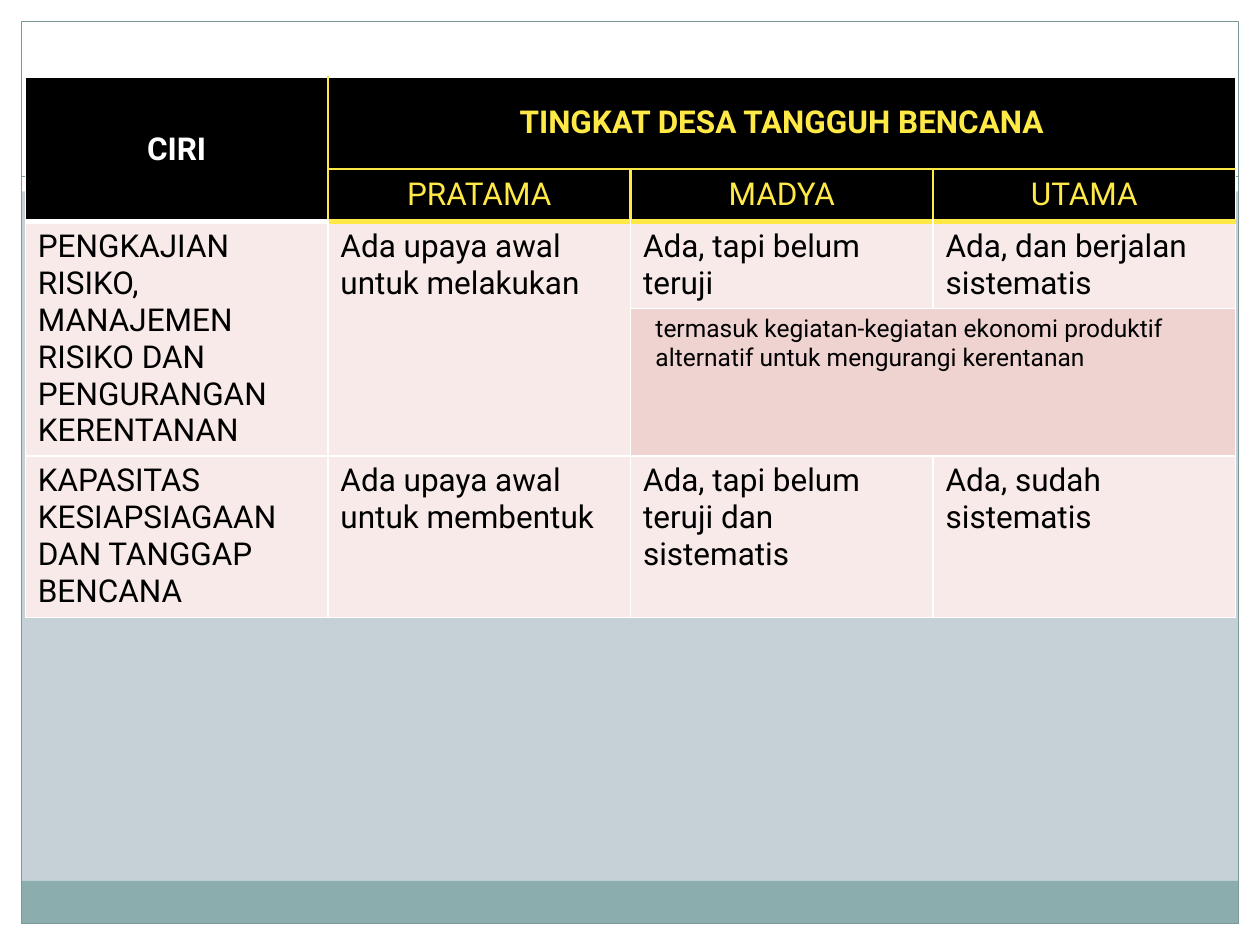
from collections import namedtuple

from lxml import etree
from pptx import Presentation
from pptx import util as u
from pptx.dml.color import RGBColor
from pptx.enum import dml, shapes, text
from pptx.oxml.ns import qn

Box = namedtuple("Box", "left top width height")

WHITE = RGBColor(0xFF, 0xFF, 0xFF)
BLACK = RGBColor(0x00, 0x00, 0x00)
YELLOW = RGBColor(0xFF, 0xE9, 0x47)
MIST = RGBColor(0xC5, 0xD1, 0xD7)
TEAL = RGBColor(0x8C, 0xAD, 0xAE)
SLATE = RGBColor(0x7C, 0x99, 0x9A)
BLUSH = RGBColor(0xF7, 0xEA, 0xE9)
ROSE = RGBColor(0xEE, 0xD3, 0xD0)

SLIDE = Box(0, 0, 25.4, 19.05)
TABLE = Box(0.51, 1.55, 24.4, 10.89)
ROW_HEIGHTS = [1.85, 1.07, 1.75, 2.97, 3.25]
HEADER_ROWS = 2
MERGES = [((0, 0), (1, 0)), ((0, 1), (0, 3)), ((2, 0), (3, 0)),
          ((2, 1), (3, 1)), ((3, 2), (3, 3))]
LEVELS = ["PRATAMA", "MADYA", "UTAMA"]
BODY = {
    2: ["PENGKAJIAN RISIKO, MANAJEMEN RISIKO DAN PENGURANGAN KERENTANAN",
        "Ada upaya awal untuk melakukan",
        "Ada, tapi belum teruji",
        "Ada, dan berjalan sistematis"],
    4: ["KAPASITAS KESIAPSIAGAAN DAN TANGGAP BENCANA",
        "Ada upaya awal untuk membentuk",
        "Ada, tapi belum teruji dan sistematis",
        "Ada, sudah sistematis"],
}
NOTE = ("termasuk kegiatan-kegiatan ekonomi produktif alternatif "
        "untuk mengurangi kerentanan")


def write(cell, words, size=18, color=BLACK, bold=False, centred=False, indent=0):
    """Put formatted words into a table cell."""
    para = cell.text_frame.paragraphs[0]
    para.alignment = text.PP_ALIGN.CENTER if centred else text.PP_ALIGN.LEFT
    if centred:
        cell.vertical_anchor = text.MSO_ANCHOR.MIDDLE
    if indent:
        properties = para._p.get_or_add_pPr()
        properties.set("marL", str(u.Cm(indent)))
        properties.set("indent", "0")
    span = para.add_run()
    span.text = words
    span.font.name = "Roboto"
    span.font.size = u.Pt(size)
    span.font.bold = bold
    span.font.color.rgb = color


def add_panel(page, box, fill=None, line=None):
    """Add a plain rectangle with an optional fill and outline."""
    panel = page.shapes.add_shape(shapes.MSO_SHAPE.RECTANGLE, *map(u.Cm, box))
    panel.shadow.inherit = False
    if fill is None:
        panel.fill.background()
    else:
        panel.fill.solid()
        panel.fill.fore_color.rgb = fill
    if line is None:
        panel.line.fill.background()
    else:
        panel.line.color.rgb = line
        panel.line.width = u.Pt(0.75)


def add_backdrop(page, box, margin=0.43, header=3.86, band=0.86):
    """Draw the white border, footer band, frame and dashed rule."""
    page.background.fill.solid()
    page.background.fill.fore_color.rgb = MIST
    right = box.left + box.width - margin
    bottom = box.top + box.height - margin
    inner = Box(box.left + margin, box.top + margin,
                box.width - 2 * margin, box.height - 2 * margin)
    for edge in (Box(box.left, bottom, box.width, margin),
                 Box(box.left, box.top, box.width, header),
                 Box(box.left, box.top, margin, box.height),
                 Box(right, box.top, margin, box.height)):
        add_panel(page, edge, fill=WHITE)
    add_panel(page, Box(inner.left, bottom - band, inner.width, band), fill=TEAL)
    add_panel(page, inner, line=SLATE)

    height = u.Cm(box.top + header - 0.3)
    rule = page.shapes.add_connector(shapes.MSO_CONNECTOR.STRAIGHT,
                                     u.Cm(inner.left), height, u.Cm(right), height)
    rule.line.color.rgb = SLATE
    rule.line.width = u.Pt(0.75)
    rule.line.dash_style = dml.MSO_LINE.SQUARE_DOT
    etree.SubElement(rule._element.spPr, qn("a:effectLst"))


def cell_borders(row, column):
    """Return the colour and width of each border of a cell."""
    borders = {side: (WHITE, 1) for side in "LRTB"}
    if row < HEADER_ROWS:
        if column > 0:
            borders["L"] = (YELLOW, 1.5)
            borders["B"] = (YELLOW, 1.5 if row == 0 else 3)
        if column == 0 or (row == 1 and column < 3):
            borders["R"] = (YELLOW, 1.5)
        if row == 1 and column > 0:
            borders["T"] = (YELLOW, 1.5)
        if column == 0:
            borders["B"] = (WHITE, 3)
    elif row == HEADER_ROWS:
        borders["T"] = (YELLOW if column else WHITE, 3)
    return borders


def style_cell(cell, row, column):
    """Apply the borders and fill that belong to a grid position."""
    properties = cell._tc.get_or_add_tcPr()
    for side, (color, width) in cell_borders(row, column).items():
        line = etree.SubElement(properties, qn(f"a:ln{side}"), w=str(u.Pt(width)))
        solid = etree.SubElement(line, qn("a:solidFill"))
        etree.SubElement(solid, qn("a:srgbClr"), val=str(color))
    cell.fill.solid()
    if row < HEADER_ROWS:
        cell.fill.fore_color.rgb = BLACK
    else:
        cell.fill.fore_color.rgb = ROSE if row == 3 and column > 1 else BLUSH


def add_level_table(page, box):
    """Build the table of traits against village resilience levels."""
    columns = len(LEVELS) + 1
    table = page.shapes.add_table(len(ROW_HEIGHTS), columns, *map(u.Cm, box)).table
    table.horz_banding = False
    for column in table.columns:
        column.width = u.Cm(box.width / columns)
    for row, height in zip(table.rows, ROW_HEIGHTS):
        row.height = u.Cm(height)
    for row in range(len(ROW_HEIGHTS)):
        for column in range(columns):
            style_cell(table.cell(row, column), row, column)
    for first, last in MERGES:
        table.cell(*first).merge(table.cell(*last))

    write(table.cell(0, 0), "CIRI", color=WHITE, bold=True, centred=True)
    write(table.cell(0, 1), "TINGKAT DESA TANGGUH BENCANA",
          color=YELLOW, bold=True, centred=True)
    for column, level in enumerate(LEVELS, start=1):
        write(table.cell(1, column), level, color=YELLOW, centred=True)
    for row, entries in BODY.items():
        for column, entry in enumerate(entries):
            write(table.cell(row, column), entry)
    write(table.cell(3, 2), NOTE, size=14, indent=0.25)


def main():
    """Build and save the deck."""
    deck = Presentation()
    deck.slide_width = u.Cm(SLIDE.width)
    deck.slide_height = u.Cm(SLIDE.height)
    page = deck.slides.add_slide(deck.slide_layouts[6])
    add_backdrop(page, SLIDE)
    add_level_table(page, TABLE)
    deck.save("out.pptx")


if __name__ == "__main__":
    main()
